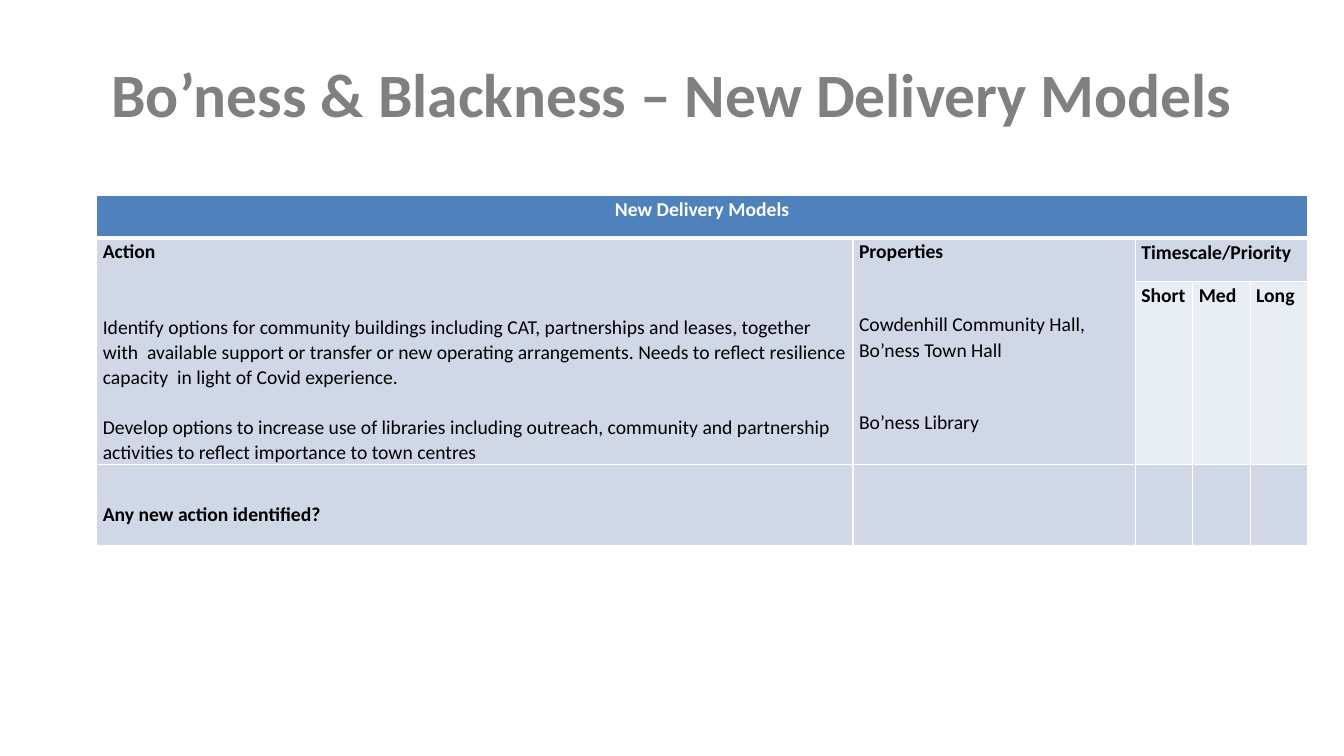
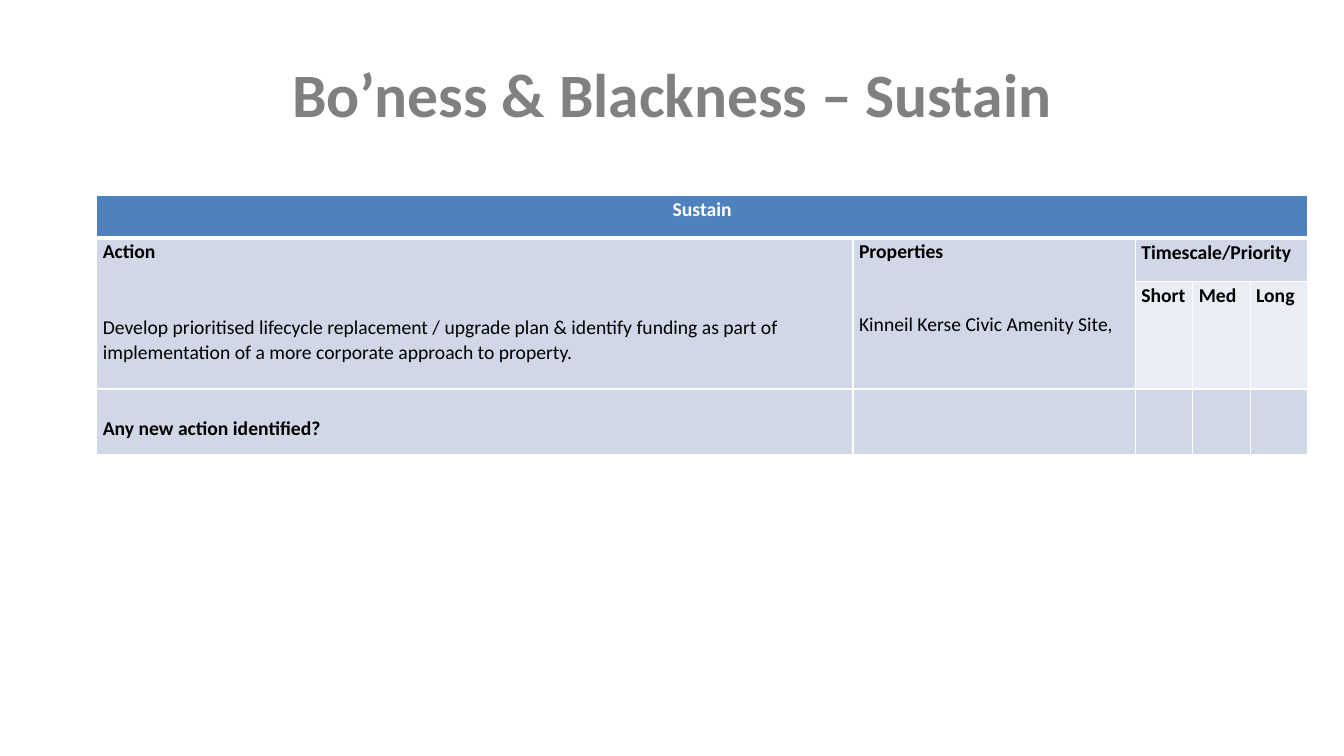
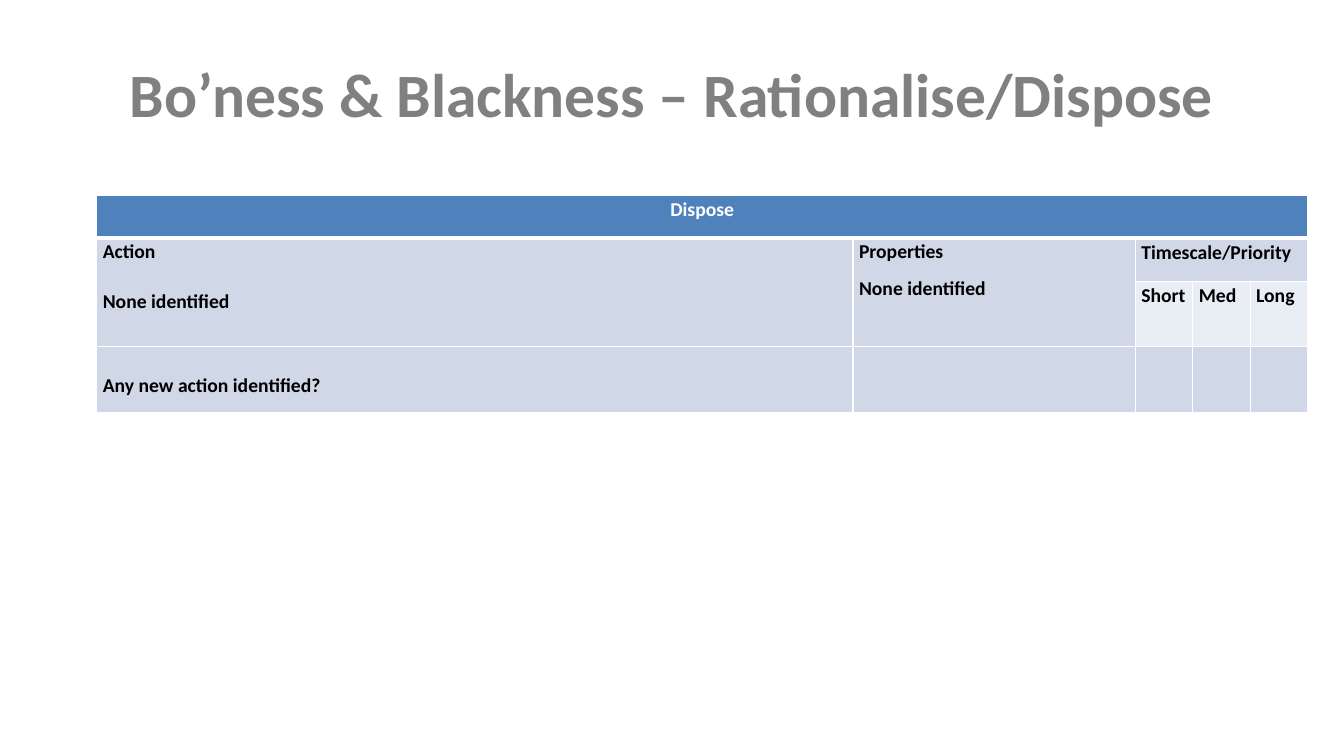
from dataclasses import dataclass

from lxml.etree import SubElement
from pptx import Presentation
from pptx.dml.color import RGBColor
from pptx.enum.text import MSO_ANCHOR, PP_ALIGN
from pptx.oxml.ns import qn
from pptx.util import Inches, Pt


@dataclass(frozen=True)
class Theme:
    font: str = "Calibri"
    title_size: int = 44
    table_size: int = 14
    title: str = "808080"
    text: str = "000000"
    white: str = "FFFFFF"
    header: str = "4F81BD"
    band: str = "D0D8E8"
    pale_band: str = "E9EDF4"


theme = Theme()


def write_text(text_frame, paragraphs, size=theme.table_size, color=theme.text,
               align=PP_ALIGN.LEFT, line_spacing=1.0):
    """Write (text, bold, points of space before) paragraphs into a text frame."""
    for index, (text, bold, space_before) in enumerate(paragraphs):
        paragraph = text_frame.paragraphs[0] if index == 0 else text_frame.add_paragraph()
        paragraph.alignment = align
        paragraph.line_spacing = line_spacing
        if space_before:
            paragraph.space_before = Pt(space_before)
        run = paragraph.add_run()
        run.text = text
        run.font.name = theme.font
        run.font.size = Pt(size)
        run.font.bold = bold
        run.font.color.rgb = RGBColor.from_string(color)


def style_cell(cell, fill, top_width, bottom_width):
    """Fill a cell and draw its white borders, with widths in points."""
    cell.margin_left = cell.margin_right = Inches(0.06)
    cell.margin_top, cell.margin_bottom = Inches(0.01), 0
    properties = cell._tc.get_or_add_tcPr()
    for side, width in (("L", 1), ("R", 1), ("T", top_width), ("B", bottom_width)):
        line = SubElement(properties, qn(f"a:ln{side}"), w=str(Pt(width)))
        SubElement(SubElement(line, qn("a:solidFill")), qn("a:srgbClr"), val=theme.white)
    cell.fill.solid()
    cell.fill.fore_color.rgb = RGBColor.from_string(fill)


column_widths = (7.5, 2.8, 0.57, 0.57, 0.57)
header_heights = (0.42, 0.43)

plans = [
    {
        "title": "New Delivery Models",
        "heading": "New Delivery Models",
        "actions": [
            ("Identify options for community buildings including CAT, partnerships and leases, "
             "together with  available support or transfer or new operating arrangements. Needs "
             "to reflect resilience capacity  in light of Covid experience.", False, 36),
            ("Develop options to increase use of libraries including outreach, community and "
             "partnership activities to reflect importance to town centres", False, 18),
        ],
        "properties": [
            ("Cowdenhill Community Hall, Bo’ness Town Hall", False, 34),
            ("Bo’ness Library", False, 34),
        ],
        "body_heights": (1.81, 0.8),
        "new_action_inset": 0.37,
    },
    {
        "title": "Sustain",
        "heading": "Sustain",
        "actions": [
            ("Develop prioritised lifecycle replacement / upgrade plan & identify funding as part "
             "of implementation of a more corporate approach to property.", False, 36),
        ],
        "properties": [("Kinneil Kerse Civic Amenity Site,", False, 34)],
        "body_heights": (1.07, 0.65),
        "new_action_inset": 0.26,
    },
    {
        "title": "Rationalise/Dispose",
        "heading": "Dispose",
        "actions": [("None identified", True, 18)],
        "properties": [("None identified", True, 8)],
        "body_heights": (0.65, 0.65),
        "new_action_inset": 0.26,
    },
]

presentation = Presentation()
presentation.slide_width, presentation.slide_height = Inches(13.33), Inches(7.5)
title_only = presentation.slide_layouts[5]

for plan in plans:
    slide = presentation.slides.add_slide(title_only)

    title = slide.shapes.title
    title.left, title.top = Inches(0.67), Inches(0.3)
    title.width, title.height = Inches(12), Inches(1.25)
    title.text_frame.vertical_anchor = MSO_ANCHOR.MIDDLE
    write_text(title.text_frame, [(f"Bo’ness & Blackness – {plan['title']}", True, 0)],
               size=theme.title_size, color=theme.title, align=PP_ALIGN.CENTER)

    row_heights = header_heights + plan["body_heights"]
    table = slide.shapes.add_table(
        len(row_heights), len(column_widths), Inches(0.96), Inches(1.94),
        Inches(sum(column_widths)), Inches(sum(row_heights))).table
    for column, width in zip(table.columns, column_widths):
        column.width = Inches(width)
    for row_index, height in enumerate(row_heights):
        table.rows[row_index].height = Inches(height)
        for column_index in range(len(column_widths)):
            if row_index == 0:
                fill = theme.header
            elif row_index == 2 and column_index >= 2:
                fill = theme.pale_band
            else:
                fill = theme.band
            style_cell(table.cell(row_index, column_index), fill,
                       top_width=3 if row_index == 1 else 1,
                       bottom_width=3 if row_index == 0 else 1)

    for first, last in (((0, 0), (0, 4)), ((1, 0), (2, 0)), ((1, 1), (2, 1)), ((1, 2), (1, 4))):
        table.cell(*first).merge(table.cell(*last))

    write_text(table.cell(0, 0).text_frame, [(plan["heading"], True, 0)],
               color=theme.white, align=PP_ALIGN.CENTER, line_spacing=1.05)
    write_text(table.cell(1, 0).text_frame, [("Action", True, 0)] + plan["actions"],
               line_spacing=1.05)
    write_text(table.cell(1, 1).text_frame, [("Properties", True, 0)] + plan["properties"],
               line_spacing=1.06)
    write_text(table.cell(1, 2).text_frame, [("Timescale/Priority", True, 0)], line_spacing=1.07)
    for column_index, term in enumerate(("Short", "Med", "Long"), start=2):
        write_text(table.cell(2, column_index).text_frame, [(term, True, 0)], line_spacing=1.07)

    new_action = table.cell(3, 0)
    new_action.margin_top = Inches(plan["new_action_inset"])
    write_text(new_action.text_frame, [("Any new action identified?", True, 0)],
               line_spacing=1.05)

presentation.save("out.pptx")
